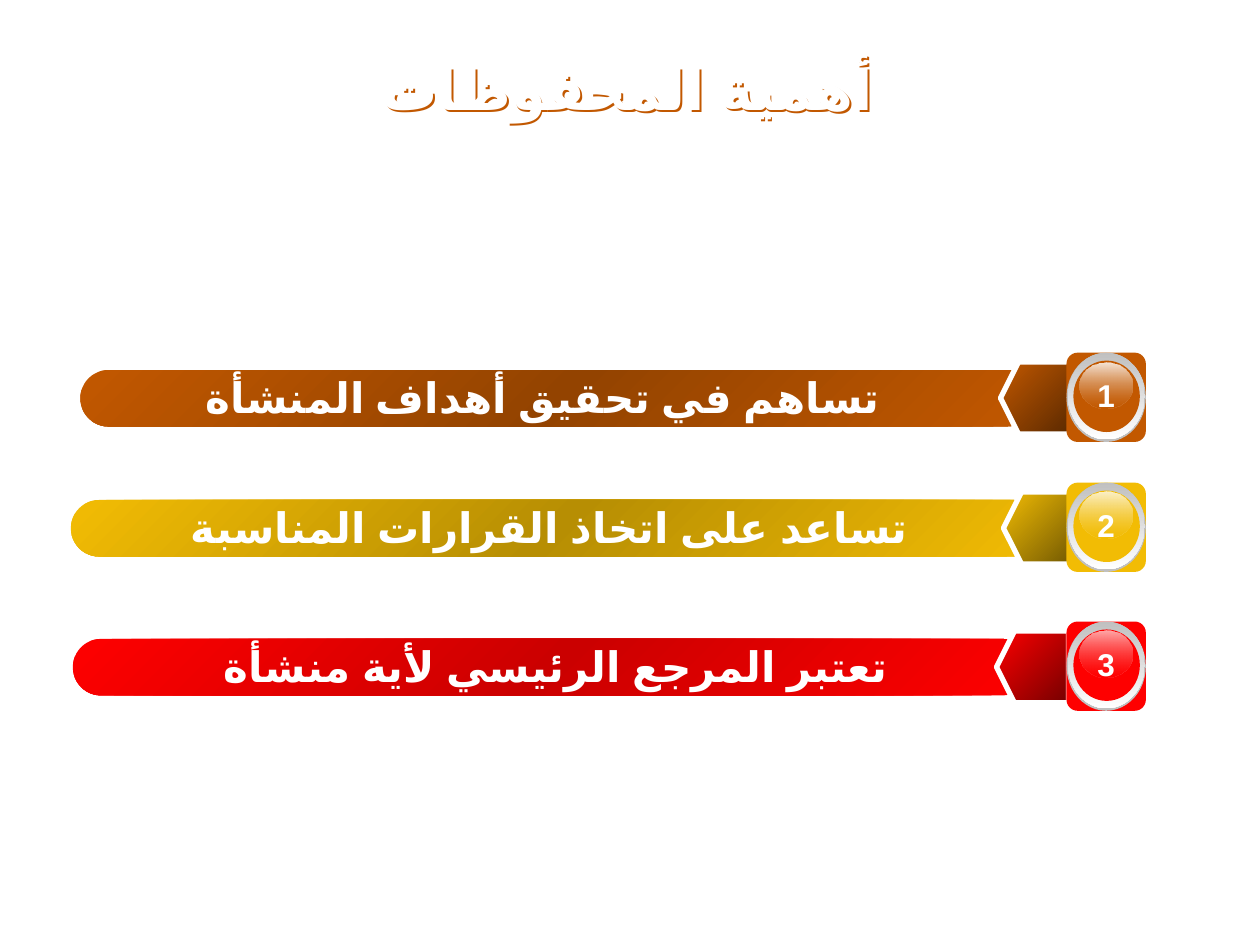
from lxml import etree
from pptx import Presentation
from pptx.dml.color import RGBColor
from pptx.enum.shapes import MSO_SHAPE
from pptx.enum.text import MSO_ANCHOR, PP_ALIGN
from pptx.oxml import parse_xml
from pptx.oxml.ns import nsdecls, qn
from pptx.util import Cm, Pt

ROUNDED = MSO_SHAPE.ROUNDED_RECTANGLE
OVAL = MSO_SHAPE.OVAL
PENTAGON = MSO_SHAPE.PENTAGON
MIDDLE = MSO_ANCHOR.MIDDLE
CENTER = PP_ALIGN.CENTER

FONT = "Arial"
WHITE = "FFFFFF"
SILVER = "C0C0C0"
ORANGE = "C25800"
BADGE_LEFT, BADGE_WIDTH, BADGE_HEIGHT = 21.5, 1.6, 1.8

ROWS = [
    dict(label="تساهم في تحقيق أهداف المنشأة", top=7.11, bar=(1.62, 19.25),
         tag_left=20.17, label_left=1.57, color=ORANGE, middle="934300",
         dark="5A2900", gloss="F6E7DA"),
    dict(label="تساعد على اتخاذ القرارات المناسبة", top=9.73, bar=(1.43, 19.58),
         tag_left=20.23, label_left=1.7, color="F2BC04", middle="B78E03",
         dark="705702", gloss="FCF2CD"),
    dict(label="تعتبر المرجع الرئيسي لأية منشأة", top=12.53, bar=(1.47, 19.3),
         tag_left=20.09, label_left=1.83, color="FE0000", middle="CB0000",
         dark="760000", gloss="FFAAAA"),
]


def rgb(value):
    return RGBColor.from_string(value)


def gradient(shape, stops, angle):
    shape.fill.gradient()
    grad = shape._element.spPr.find(qn("a:gradFill"))
    grad.set("rotWithShape", "1")
    stop_list = grad.find(qn("a:gsLst"))
    for stop in list(stop_list):
        stop_list.remove(stop)
    for position, color, opacity in stops:
        stop = etree.SubElement(stop_list, qn("a:gs"), pos=str(position * 1000))
        tint = etree.SubElement(stop, qn("a:srgbClr"), val=color)
        if opacity < 100:
            etree.SubElement(tint, qn("a:alpha"), val=str(opacity * 1000))
    grad.find(qn("a:lin")).set("ang", str(angle * 60000))


def add_part(shapes, preset, box, fill=None, stops=None, angle=90, adjust=None, flip=False):
    part = shapes.add_shape(preset, *map(Cm, box))
    part.shadow.inherit = False
    part.line.fill.background()
    if adjust is not None:
        part.adjustments[0] = adjust
    if stops:
        gradient(part, stops, angle)
    else:
        part.fill.solid()
        part.fill.fore_color.rgb = rgb(fill)
    if flip:
        part._element.spPr.find(qn("a:xfrm")).set("flipH", "1")
    return part


def add_text(shapes, box, text, size, rtl=False, wrap=False):
    holder = shapes.add_textbox(*map(Cm, box))
    frame = holder.text_frame
    frame.word_wrap = wrap
    frame.vertical_anchor = MIDDLE
    paragraph = frame.paragraphs[0]
    paragraph.text = text
    paragraph.alignment = CENTER
    font = paragraph.font
    font.name, font.size, font.bold = FONT, Pt(size), True
    font.color.rgb = rgb(WHITE)
    if rtl:
        paragraph._p.get_or_add_pPr().set("rtl", "1")
        script = paragraph.runs[0]._r.get_or_add_rPr()
        script.set("lang", "ar-SA")
        etree.SubElement(script, qn("a:cs"), typeface=FONT, pitchFamily="34", charset="0")
    return holder


def add_title(slide, box):
    title = add_text(slide.shapes, box, "أهمية المحفوظات", 32, rtl=True, wrap=True)
    title._element.spPr.append(parse_xml(
        f'<a:effectLst {nsdecls("a")}><a:outerShdw dist="17961" dir="2700000" algn="ctr">'
        f'<a:srgbClr val="{ORANGE}"/></a:outerShdw></a:effectLst>'))


def add_badge(slide, box, number, color, gloss):
    left, top, width, height = box
    shapes = slide.shapes.add_group_shape().shapes
    add_part(shapes, ROUNDED, box, color, adjust=0.14)
    add_part(shapes, OVAL, box, SILVER)
    add_part(shapes, OVAL, (left + 0.03, top, width - 0.05, height - 0.05),
             stops=[(0, SILVER, 100), (100, WHITE, 100)])
    add_part(shapes, OVAL, (left + 0.14, top + 0.16, 1.34, 1.44), color, flip=True)
    add_part(shapes, OVAL, (left + 0.26, top + 0.19, 1.07, 0.94),
             stops=[(0, gloss, 100), (100, color, 38)], flip=True)
    add_text(shapes, (left, top, width, 1.7), str(number), 18)


def add_row(slide, number, row):
    top, color = row["top"], row["color"]
    bar_left, bar_width = row["bar"]
    add_part(slide.shapes, ROUNDED, (bar_left, top + 0.35, bar_width, 1.14),
             stops=[(0, color, 100), (50, row["middle"], 100), (100, color, 100)],
             angle=315, adjust=0.5, flip=True)
    tag = add_part(slide.shapes, PENTAGON, (row["tag_left"], top + 0.19, 1.45, 1.45),
                   stops=[(0, row["dark"], 100), (100, color, 100)],
                   angle=315, adjust=0.25, flip=True)
    tag.line.color.rgb = rgb(WHITE)
    tag.line.width = Pt(3)
    add_badge(slide, (BADGE_LEFT, top, BADGE_WIDTH, BADGE_HEIGHT), number, color, row["gloss"])
    add_text(slide.shapes, (row["label_left"], top + 0.17, 18.75, 1.45),
             row["label"], 24, rtl=True)


def main():
    deck = Presentation()
    deck.slide_width, deck.slide_height = Cm(25.4), Cm(19.05)
    slide = deck.slides.add_slide(deck.slide_layouts[6])
    add_title(slide, (0.3, 1.07, 24.69, 1.42))
    for number, row in enumerate(ROWS, 1):
        add_row(slide, number, row)
    deck.save("out.pptx")


if __name__ == "__main__":
    main()
